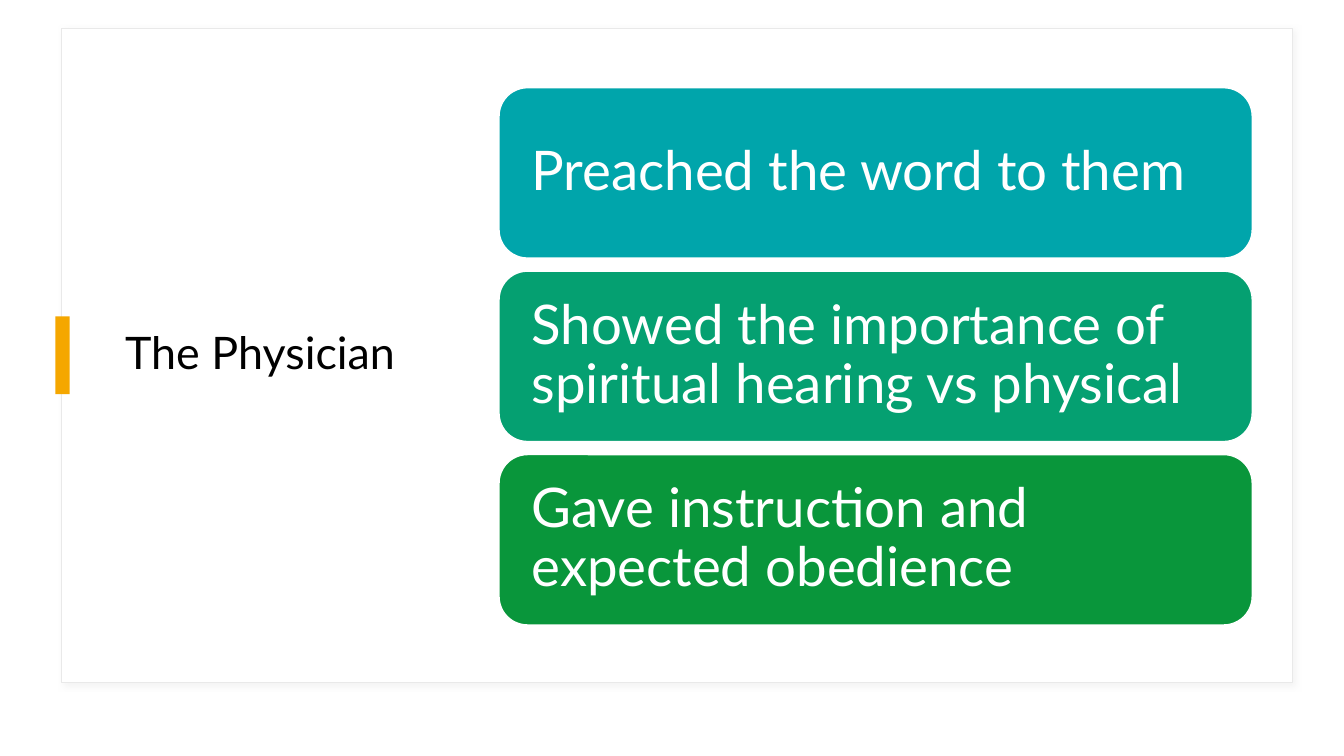
from lxml import etree
from pptx import Presentation
from pptx.dml.color import RGBColor
from pptx.enum.shapes import MSO_SHAPE
from pptx.enum.text import MSO_ANCHOR, PP_ALIGN
from pptx.oxml.ns import qn
from pptx.util import Inches, Pt

RECT = MSO_SHAPE.RECTANGLE
ROUNDED = MSO_SHAPE.ROUNDED_RECTANGLE
MIDDLE = MSO_ANCHOR.MIDDLE
LEFT = PP_ALIGN.LEFT

FONT = "Lato"
COLORS = {
    "white": "FFFFFF",
    "black": "000000",
    "border": "E9E9E9",
    "shadow": "D9D9D9",
    "accent": "F5A700",
    "teal": "00A5AB",
    "sea": "05A071",
    "green": "09963B",
}
POINTS = [
    ("Preached the word to them", "teal"),
    ("Showed the importance of spiritual hearing vs physical", "sea"),
    ("Gave instruction and expected obedience", "green"),
]
CARD_LEFT, CARD_TOP = 4.95, 0.87
CARD_WIDTH, CARD_HEIGHT = 7.47, 1.69
ROW_PITCH = 1.82
CARD_INSET = 0.24


def rgb(name):
    return RGBColor.from_string(COLORS[name])


def add_block(s, kind, box, fill, line=None):
    sp = s.shapes.add_shape(kind, *map(Inches, box))
    sp.shadow.inherit = False
    sp.fill.solid()
    sp.fill.fore_color.rgb = rgb(fill)
    if line:
        sp.line.color.rgb = rgb(line)
        sp.line.width = Pt(1)
    else:
        sp.line.fill.background()
    return sp


def add_soft_shadow(sp):
    effects = sp.element.spPr.find(qn("a:effectLst"))
    shadow = etree.SubElement(
        effects, qn("a:outerShdw"), blurRad=str(Pt(4)), dist=str(Pt(3)),
        dir=str(45 * 60000), algn="tl", rotWithShape="0")
    color = etree.SubElement(shadow, qn("a:srgbClr"), val=COLORS["shadow"])
    etree.SubElement(color, qn("a:alpha"), val="30000")


def write_text(sp, text, size, color, inset_x, inset_y):
    tf = sp.text_frame
    tf.word_wrap = True
    tf.vertical_anchor = MIDDLE
    tf.margin_left = tf.margin_right = Inches(inset_x)
    tf.margin_top = tf.margin_bottom = Inches(inset_y)
    p = tf.paragraphs[0]
    p.alignment = LEFT
    p.line_spacing = 0.9
    r = p.add_run()
    r.text = text
    r.font.name = FONT
    r.font.size = Pt(size)
    r.font.color.rgb = rgb(color)


def add_title(s, text, box):
    title = s.shapes.title
    title.left, title.top, title.width, title.height = map(Inches, box)
    write_text(title, text, 32, "black", 0.1, 0.05)
    return title


def add_card(s, row, text, fill):
    box = (CARD_LEFT, CARD_TOP + row * ROW_PITCH, CARD_WIDTH, CARD_HEIGHT)
    card = add_block(s, ROUNDED, box, fill, "white")
    write_text(card, text, 39, "white", CARD_INSET, CARD_INSET)


def main():
    prs = Presentation()
    prs.slide_width, prs.slide_height = Inches(13.33), Inches(7.5)
    s = prs.slides.add_slide(prs.slide_layouts[5])
    s.background.fill.solid()
    s.background.fill.fore_color.rgb = rgb("white")

    panel = add_block(s, RECT, (0.61, 0.28, 12.21, 6.49), "white", "border")
    add_soft_shadow(panel)
    title = add_title(s, "The Physician", (1.14, 0.55, 3.27, 5.95))
    title.element.addprevious(panel.element)
    add_block(s, RECT, (0.55, 3.14, 0.14, 0.77), "accent")

    for row, (text, fill) in enumerate(POINTS):
        add_card(s, row, text, fill)

    prs.save("out.pptx")


if __name__ == "__main__":
    main()
